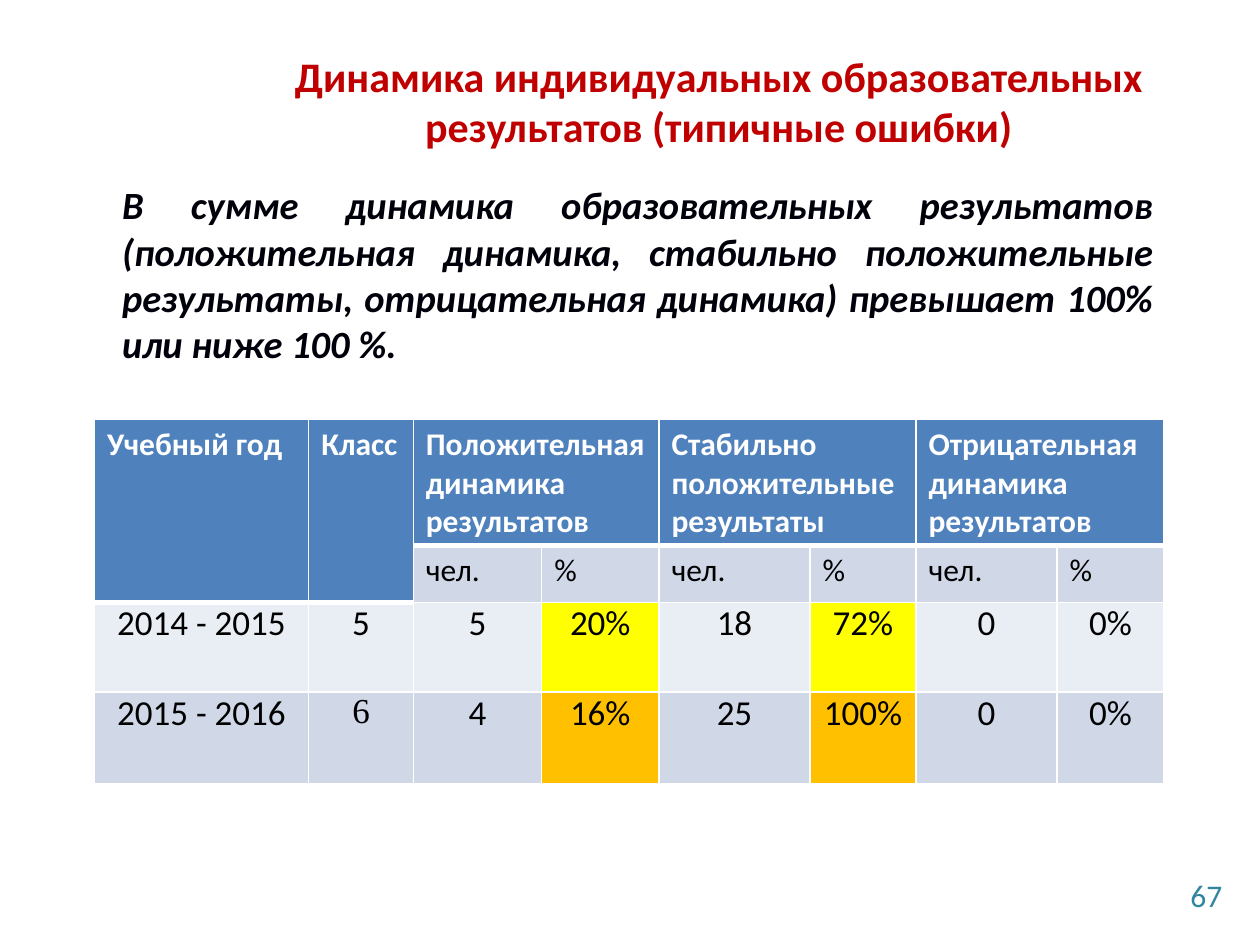
from lxml import etree
from pptx import Presentation
from pptx.dml.color import RGBColor
from pptx.enum.text import MSO_ANCHOR as ANCHOR, MSO_AUTO_SIZE as AUTO, PP_ALIGN as ALIGN
from pptx.oxml.ns import qn
from pptx.util import Inches, Pt

FONT = "Calibri"
HEADER, BAND_DARK, BAND_LIGHT = "4F81BD", "D0D8E8", "E9EDF4"
YELLOW, ORANGE = "FFFF00", "FFC000"

COL_WIDTHS = [1.7, 0.83, 1.02, 0.93, 1.2, 0.84, 1.12, 0.85]
ROW_HEIGHTS = [0.9, 0.45, 0.71, 0.73]
RESULT_GROUPS = [
    "Положительная динамика результатов",
    "Стабильно положительные результаты",
    "Отрицательная динамика результатов",
]
# Values, band colour and highlight colour of each school year
YEARS = [
    (["2014 - 2015", "5", "5", "20%", "18", "72%", "0", "0%"], BAND_LIGHT, YELLOW),
    (["2015 - 2016", "6", "4", "16%", "25", "100%", "0", "0%"], BAND_DARK, ORANGE),
]
HIGHLIGHT_COLS = (3, 5)


def rgb(color):
    return RGBColor.from_string(color)


def set_text(tf, text, size, color, align=ALIGN.LEFT, bold=False, italic=False, font=FONT):
    tf.text = text
    p = tf.paragraphs[0]
    p.alignment = align
    f = p.runs[0].font
    f.name, f.size, f.bold, f.italic = font, Pt(size), bold, italic
    f.color.rgb = rgb(color)
    return p


def place(sp, left, top, width, height):
    sp.left, sp.top, sp.width, sp.height = map(Inches, (left, top, width, height))


def add_text(slide, box, text, size, color, anchor=ANCHOR.TOP, **style):
    sp = slide.shapes.add_textbox(*map(Inches, box))
    tf = sp.text_frame
    tf.word_wrap = True
    tf.vertical_anchor = anchor
    return set_text(tf, text, size, color, **style)


def set_borders(cell, bottom=1):
    tc_pr = cell._tc.get_or_add_tcPr()
    sides = [("lnL", 1), ("lnR", 1), ("lnT", 1), ("lnB", bottom)]
    for i, (side, width) in enumerate(sides):
        ln = etree.Element(qn(f"a:{side}"), w=str(Pt(width)))
        fill = etree.SubElement(ln, qn("a:solidFill"))
        etree.SubElement(fill, qn("a:srgbClr"), val="FFFFFF")
        tc_pr.insert(i, ln)


def fill_cell(cell, color, bottom=1):
    cell.fill.solid()
    cell.fill.fore_color.rgb = rgb(color)
    set_borders(cell, bottom)


def add_header(table):
    for col in range(len(COL_WIDTHS)):
        fill_cell(table.cell(0, col), HEADER, bottom=3)
        if col < 2:
            fill_cell(table.cell(1, col), HEADER, bottom=3)
        else:
            cell = table.cell(1, col)
            fill_cell(cell, BAND_DARK)
            set_text(cell.text_frame, ("чел.", "%")[col % 2], 18, "000000")

    # Two tall headings, then three headings over a pair of columns each
    spans = [("Учебный год", 0, 1, 0), ("Класс", 1, 1, 1)]
    spans += [(name, 2 + 2 * i, 0, 3 + 2 * i) for i, name in enumerate(RESULT_GROUPS)]
    for text, col, last_row, last_col in spans:
        cell = table.cell(0, col)
        cell.merge(table.cell(last_row, last_col))
        set_text(cell.text_frame, text, 18, "FFFFFF", bold=True)


def add_year(table, row, values, band, highlight):
    for col, value in enumerate(values):
        cell = table.cell(row, col)
        fill_cell(cell, highlight if col in HIGHLIGHT_COLS else band)
        cell.margin_left = cell.margin_right = Inches(0.07)
        cell.margin_top = cell.margin_bottom = 0
        font = "Times New Roman" if value == "6" else FONT
        set_text(cell.text_frame, value, 20, "000000", align=ALIGN.CENTER, font=font)


def add_results_table(slide):
    rows, cols = len(ROW_HEIGHTS), len(COL_WIDTHS)
    table = slide.shapes.add_table(
        rows, cols, Inches(0.75), Inches(3.33), Inches(8.5), Inches(2.88)).table
    for col, width in zip(table.columns, COL_WIDTHS):
        col.width = Inches(width)
    for row, height in zip(table.rows, ROW_HEIGHTS):
        row.height = Inches(height)
    add_header(table)
    for row, year in enumerate(YEARS, start=2):
        add_year(table, row, *year)


def main():
    prs = Presentation()
    prs.slide_width, prs.slide_height = Inches(10), Inches(7.5)
    slide = prs.slides.add_slide(prs.slide_layouts[5])

    # Title
    title = slide.shapes.title
    place(title, 1.61, 0.29, 8.19, 1.02)
    tf = title.text_frame
    tf.word_wrap = True
    tf.auto_size = AUTO.NONE
    tf.vertical_anchor = ANCHOR.MIDDLE
    set_text(tf, "Динамика индивидуальных образовательных результатов (типичные ошибки)",
             24, "C00000", align=ALIGN.CENTER, bold=True)

    # Description of the typical mistake
    p = add_text(
        slide, (0.67, 1.39, 8.58, 1.95),
        "В сумме динамика образовательных результатов (положительная динамика, "
        "стабильно положительные результаты, отрицательная динамика) "
        "превышает 100% или ниже 100 %.",
        22, "00000A", align=ALIGN.JUSTIFY, bold=True, italic=True)
    p._p.get_or_add_pPr().set("marL", str(Inches(0.2)))

    add_results_table(slide)

    # Slide number
    add_text(slide, (7.47, 6.9, 2.33, 0.4), "67", 18, "31859C",
             anchor=ANCHOR.MIDDLE, align=ALIGN.RIGHT)

    prs.save("out.pptx")


if __name__ == "__main__":
    main()
